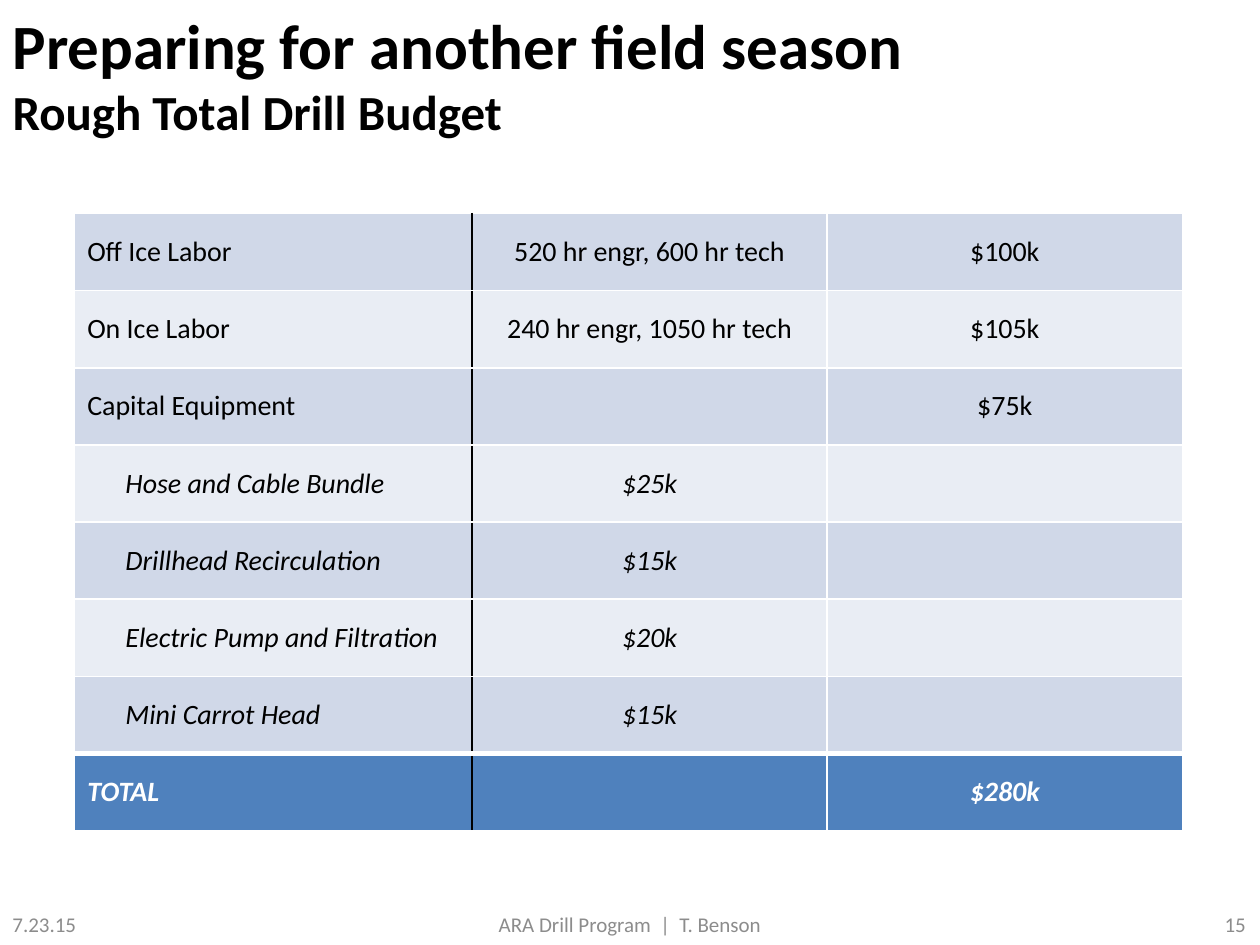
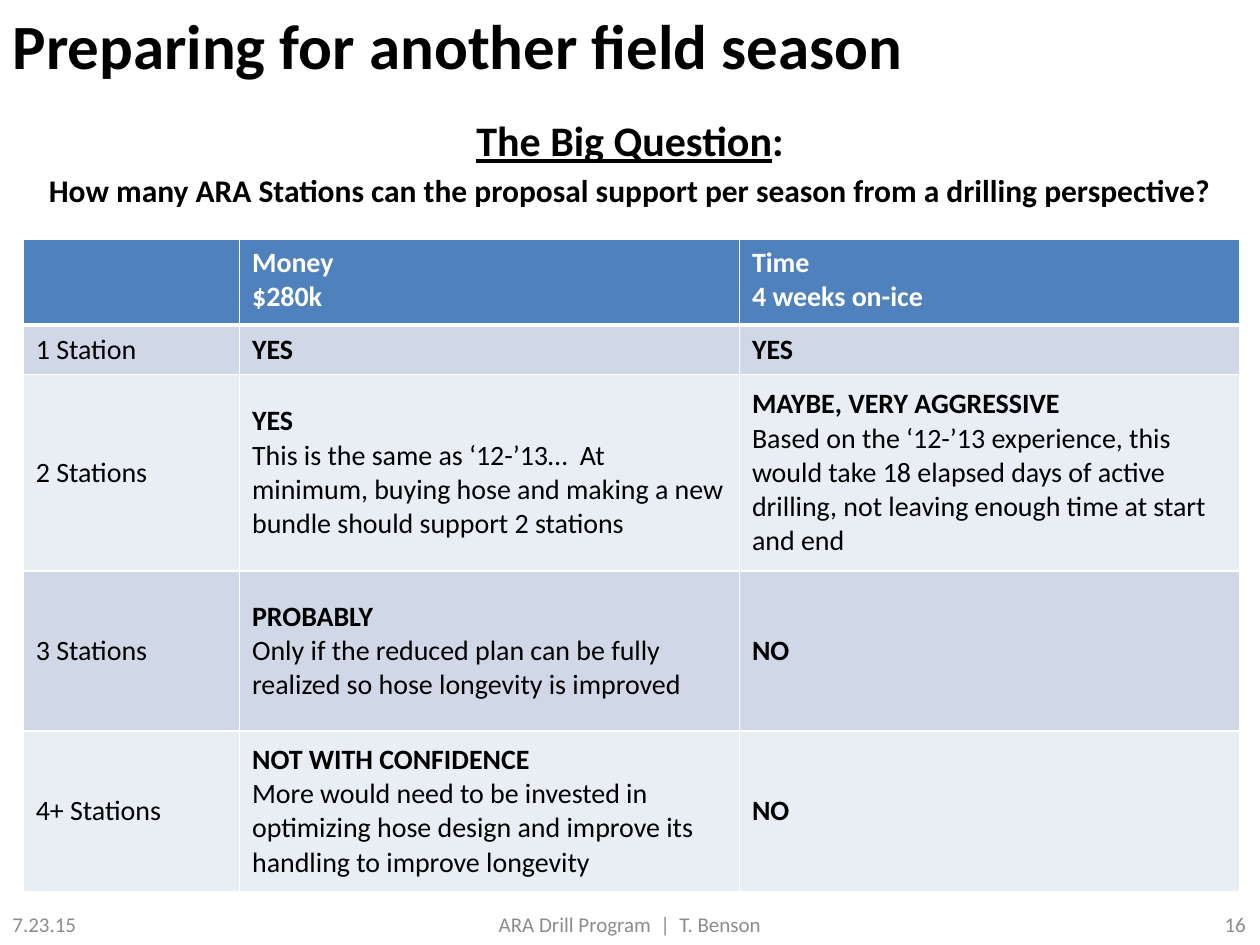
from lxml import etree
from pptx import Presentation
from pptx import util as u
from pptx.dml.color import RGBColor
from pptx.enum import text as t
from pptx.oxml.ns import qn

FONT = "Calibri"
COLORS = {"ink": "000000", "paper": "FFFFFF", "footer": "8C8C8C",
          "accent": "4F81BD", "band_dark": "D0D8E8", "band_light": "E9EDF4"}
LEFT, CENTER, RIGHT = t.PP_ALIGN.LEFT, t.PP_ALIGN.CENTER, t.PP_ALIGN.RIGHT
TOP, MIDDLE = t.MSO_ANCHOR.TOP, t.MSO_ANCHOR.MIDDLE
PAGE_WIDTH, PAGE_HEIGHT = 720, 540
HEADLINE = "Preparing for another field season"
DATE, CREDIT = "7.23.15", "ARA Drill Program  |  T. Benson"

BUDGET = [
    ("Off Ice Labor", "520 hr engr, 600 hr tech", "$100k"),
    ("On Ice Labor", "240 hr engr, 1050 hr tech", "$105k"),
    ("Capital Equipment", "", "$75k"),
    ("Hose and Cable Bundle", "$25k", ""),
    ("Drillhead Recirculation", "$15k", ""),
    ("Electric Pump and Filtration", "$20k", ""),
    ("Mini Carrot Head", "$15k", ""),
    ("TOTAL", "", "$280k"),
]
EQUIPMENT_ITEMS = range(3, 7)

STATIONS = [
    ("", "Money\n$280k", "Time\n4 weeks on-ice"),
    ("1 Station", "YES", "YES"),
    ("2 Stations",
     "YES\nThis is the same as ‘12-’13…  At minimum, buying hose and making "
     "a new bundle should support 2 stations",
     "MAYBE, VERY AGGRESSIVE\nBased on the ‘12-’13 experience, this would take "
     "18 elapsed days of active drilling, not leaving enough time at start and end"),
    ("3 Stations",
     "PROBABLY\nOnly if the reduced plan can be fully realized so hose "
     "longevity is improved", "NO"),
    ("4+ Stations",
     "NOT WITH CONFIDENCE\nMore would need to be invested in optimizing hose "
     "design and improve its handling to improve longevity", "NO"),
]


def place(shape, box):
    shape.left, shape.top, shape.width, shape.height = map(u.Pt, box)


def style(paragraph, size, color="ink", bold=False, italic=False, align=LEFT):
    paragraph.alignment = align
    for run in paragraph.runs:
        font = run.font
        font.name, font.size = FONT, u.Pt(size)
        font.bold, font.italic = bold, italic
        font.color.rgb = RGBColor.from_string(COLORS[color])


def add_title(slide, subtitle=""):
    title = slide.shapes.title
    place(title, (0, 0, PAGE_WIDTH, 87))
    frame = title.text_frame
    frame.auto_size, frame.vertical_anchor = t.MSO_AUTO_SIZE.NONE, TOP
    frame.text = f"{HEADLINE}\v{subtitle}" if subtitle else HEADLINE
    heading = frame.paragraphs[0]
    style(heading, 36, bold=True)
    for subtitle_run in heading.runs[1:]:
        subtitle_run.font.size = u.Pt(28)


def add_footer(slide, page):
    parts = [(DATE, 0, 168, LEFT), (CREDIT, 246, 228, CENTER),
             (str(page), 551, 168, RIGHT)]
    for words, left, width, align in parts:
        note = slide.shapes.add_textbox(*map(u.Pt, (left, 516, width, 24)))
        frame = note.text_frame
        frame.word_wrap, frame.vertical_anchor = True, MIDDLE
        frame.text = words
        style(frame.paragraphs[0], 12, "footer", align=align)


def add_question(slide, box):
    question = slide.placeholders[1]
    place(question, box)
    frame = question.text_frame
    frame.auto_size, frame.vertical_anchor = t.MSO_AUTO_SIZE.NONE, TOP
    frame.text = ("The Big Question:\nHow many ARA Stations can the proposal "
                  "support per season from a drilling perspective?")
    lead, detail = frame.paragraphs
    lead.text = "The Big Question"
    lead.add_run().text = ":"
    for paragraph, size, gap in ((lead, 24, 0), (detail, 18, 3.6)):
        style(paragraph, size, bold=True, align=CENTER)
        paragraph.space_before = u.Pt(gap)
        properties = paragraph._p.get_or_add_pPr()
        properties.set("marL", "0")
        properties.set("indent", "0")
        etree.SubElement(properties, qn("a:buNone"))
    lead.runs[0].font.underline = True


def paint_cell(cell, fill, **edges):
    """Draw white 1 pt borders, save where edges gives (color, width), then fill."""
    properties = cell._tc.get_or_add_tcPr()
    for side in "LRTB":
        color, width = edges.get(side, ("paper", 1))
        line = etree.SubElement(properties, qn(f"a:ln{side}"), w=str(u.Pt(width)))
        solid = etree.SubElement(line, qn("a:solidFill"))
        etree.SubElement(solid, qn("a:srgbClr"), val=COLORS[color])
    cell.fill.solid()
    cell.fill.fore_color.rgb = RGBColor.from_string(COLORS[fill])


def add_grid(slide, content, left, top, widths, heights):
    """Add an unstyled table holding the content and return it."""
    frame = slide.shapes.add_table(len(heights), len(widths), *map(
        u.Pt, (left, top, sum(widths), sum(heights))))
    table = frame.table
    table.first_row = table.horz_banding = False
    for column, width in zip(table.columns, widths):
        column.width = u.Pt(width)
    for row, height, entries in zip(table.rows, heights, content):
        row.height = u.Pt(height)
        for cell, words in zip(row.cells, entries):
            cell.text_frame.text = words
            cell.vertical_anchor = MIDDLE
    return table


def add_budget_table(slide, left, top):
    table = add_grid(slide, BUDGET, left, top, [227, 203, 203], [44.1] * len(BUDGET))
    for r, row in enumerate(table.rows):
        is_total = r == len(BUDGET) - 1
        band = "band_light" if r % 2 else "band_dark"
        for c, cell in enumerate(row.cells):
            edges = {0: {"R": ("ink", 1)}, 1: {"L": ("ink", 1)}}.get(c, {})
            if is_total:
                edges["T"] = ("paper", 3)
            elif r == len(BUDGET) - 2:
                edges["B"] = ("paper", 3)
            paint_cell(cell, "accent" if is_total else band, **edges)
            style(cell.text_frame.paragraphs[0], 16, "paper" if is_total else "ink",
                  bold=is_total, italic=is_total or r in EQUIPMENT_ITEMS,
                  align=CENTER if c else LEFT)
        if r in EQUIPMENT_ITEMS:
            row.cells[0].margin_left = u.Pt(29)


def add_station_table(slide, left, top):
    table = add_grid(slide, STATIONS, left, top, [123.6, 285.7, 285.7],
                     [48.8, 28.1, 112.5, 91.5, 91.5])
    for r, row in enumerate(table.rows):
        is_header = r == 0
        band = "band_dark" if r % 2 else "band_light"
        edges = {0: {"B": ("paper", 3)}, 1: {"T": ("paper", 3)}}.get(r, {})
        for c, cell in enumerate(row.cells):
            paint_cell(cell, "accent" if is_header else band, **edges)
            if is_header:
                cell.vertical_anchor = TOP
            for i, paragraph in enumerate(cell.text_frame.paragraphs):
                is_verdict = c > 0 and i == 0
                style(paragraph, 16, "paper" if is_header else "ink",
                      bold=is_header or is_verdict)


def budget_slide(deck):
    slide = deck.slides.add_slide(deck.slide_layouts[5])
    add_footer(slide, 15)
    add_budget_table(slide, 42.7, 122)
    add_title(slide, "Rough Total Drill Budget")


def stations_slide(deck):
    slide = deck.slides.add_slide(deck.slide_layouts[1])
    add_footer(slide, 16)
    add_title(slide)
    add_question(slide, (0, 62, PAGE_WIDTH, 78))
    add_station_table(slide, 13.3, 137)


def main():
    deck = Presentation()
    deck.slide_width, deck.slide_height = u.Pt(PAGE_WIDTH), u.Pt(PAGE_HEIGHT)
    budget_slide(deck)
    stations_slide(deck)
    deck.save("out.pptx")


if __name__ == "__main__":
    main()
